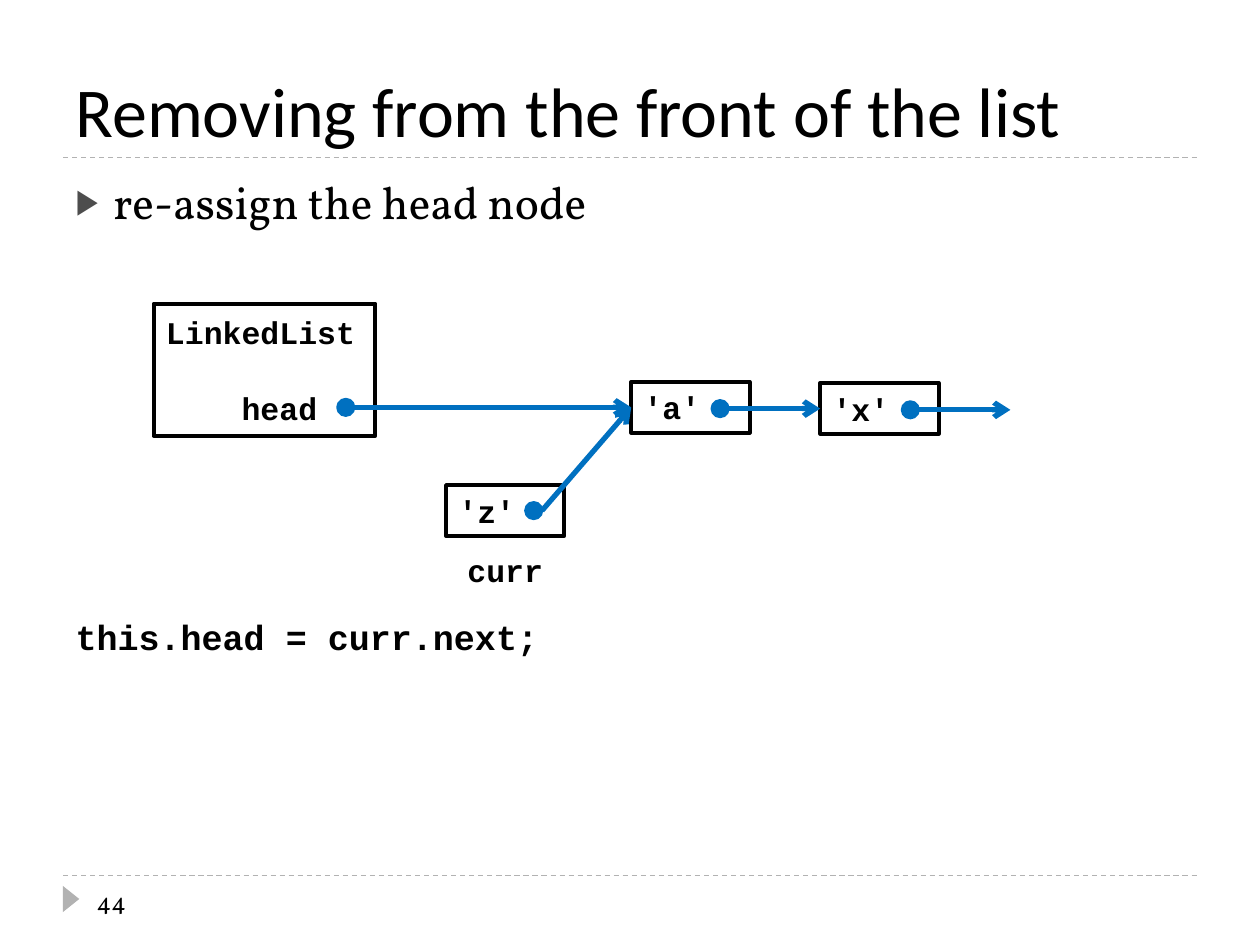
from lxml.etree import SubElement
from pptx import Presentation
from pptx.dml.color import RGBColor
from pptx.enum.dml import MSO_LINE
from pptx.enum.shapes import MSO_CONNECTOR, MSO_SHAPE
from pptx.enum.text import MSO_ANCHOR, PP_ALIGN
from pptx.oxml.ns import qn
from pptx.util import Pt

COLORS = {name: RGBColor.from_string(value) for name, value in {
    "text": "000000", "pointer": "0070C0", "rule": "B2B2B2", "bullet": "4D4D4D",
}.items()}


def write(paragraph, text, font_name, size, bold=False):
    paragraph.text = text
    paragraph.font.name = font_name
    paragraph.font.size = Pt(size)
    paragraph.font.bold = bold
    paragraph.font.color.rgb = COLORS["text"]


def add_line(start_x, start_y, end_x, end_y, color, width):
    line = slide.shapes.add_connector(
        MSO_CONNECTOR.STRAIGHT, Pt(start_x), Pt(start_y), Pt(end_x), Pt(end_y))
    line.line.color.rgb = COLORS[color]
    line.line.width = Pt(width)
    SubElement(line._element.spPr, qn("a:effectLst"))
    return line


presentation = Presentation()
presentation.slide_width, presentation.slide_height = Pt(720), Pt(540)
slide = presentation.slides.add_slide(presentation.slide_layouts[1])

for rule_y in (500.4, 90):
    rule = add_line(36, rule_y, 684, rule_y, "rule", 0.75)
    rule.line.dash_style = MSO_LINE.DASH

marker = slide.shapes.add_shape(
    MSO_SHAPE.ISOSCELES_TRIANGLE, Pt(33.1), Pt(509), Pt(15), Pt(9.4))
marker.rotation = 90
marker.shadow.inherit = False
marker.fill.solid()
marker.fill.fore_color.rgb = COLORS["rule"]
marker.line.fill.background()

title = slide.shapes.title
title.left, title.top, title.width, title.height = Pt(36), Pt(12.2), Pt(648), Pt(77.8)
title.text_frame.vertical_anchor = MSO_ANCHOR.BOTTOM
heading = title.text_frame.paragraphs[0]
write(heading, "Removing from the front of the list", "Calibri", 40)
heading.alignment = PP_ALIGN.LEFT

body = slide.placeholders[1]
body.left, body.top, body.width, body.height = Pt(36), Pt(95.8), Pt(648), Pt(388.8)
step = body.text_frame.paragraphs[0]
write(step, "re-assign the head node", "Vollkorn", 26)
step.space_before = Pt(6)
step_properties = step._p.get_or_add_pPr()
step_properties.set("marL", str(Pt(21.6)))
step_properties.set("indent", str(Pt(-21.6)))
bullet_color = SubElement(step_properties, qn("a:buClr"))
SubElement(bullet_color, qn("a:srgbClr"), val=str(COLORS["bullet"]))
SubElement(step_properties, qn("a:buSzPct"), val="76000")
SubElement(step_properties, qn("a:buChar"), char="▶")

code = body.text_frame.add_paragraph()
write(code, "this.head = curr.next;", "Courier New", 20, bold=True)
code.space_before = Pt(221)
code_properties = code._p.get_or_add_pPr()
code_properties.set("marL", "0")
code_properties.set("indent", "0")
SubElement(code_properties, qn("a:buNone"))

boxes = [
    ("LinkedList", 87.8, 173.5, 126.7, 75.6),
    ("'a'", 360.7, 218.2, 67.7, 29),
    ("'x'", 468.7, 218.9, 67.7, 29),
    ("'z'", 254.9, 277.2, 67.7, 29),
]
for text, left, top, width, height in boxes:
    box = slide.shapes.add_shape(
        MSO_SHAPE.RECTANGLE, Pt(left), Pt(top), Pt(width), Pt(height))
    box.shadow.inherit = False
    box.fill.background()
    box.line.color.rgb = COLORS["text"]
    box.line.width = Pt(2.25)
    box.text_frame.vertical_anchor = MSO_ANCHOR.MIDDLE
    label = box.text_frame.paragraphs[0]
    write(label, text, "Courier New", 18, bold=True)
    label.alignment = PP_ALIGN.LEFT
    if text == "LinkedList":
        field = box.text_frame.add_paragraph()
        write(field, "head", "Courier New", 18, bold=True)
        field.alignment = PP_ALIGN.LEFT
        field.space_before = Pt(22)
        field._p.get_or_add_pPr().set("marL", str(Pt(43.2)))

dot_size = 9.4
pointers = [
    (197.6, 232.8, 360.7, 232.8),
    (411.5, 233.5, 468.7, 233.5),
    (520.2, 234.2, 577.4, 234.2),
    (305, 291.8, 360.7, 232.8),
]
for center_x, center_y, end_x, end_y in pointers:
    dot = slide.shapes.add_shape(
        MSO_SHAPE.OVAL, Pt(center_x - dot_size / 2), Pt(center_y - dot_size / 2),
        Pt(dot_size), Pt(dot_size))
    dot.shadow.inherit = False
    dot.fill.solid()
    dot.fill.fore_color.rgb = COLORS["pointer"]
    dot.line.color.rgb = COLORS["pointer"]
    dot.line.width = Pt(1.5)
    arrow = add_line(center_x + dot_size / 2, center_y, end_x, end_y, "pointer", 3)
    SubElement(arrow.line._get_or_add_ln(), qn("a:tailEnd"), type="arrow")

captions = [
    ("curr", 254.9, 311, 67.7, "Courier New", 18, True, PP_ALIGN.CENTER),
    ("44", 48.2, 500.4, 156.2, "Vollkorn", 14, False, PP_ALIGN.LEFT),
]
for text, left, top, width, font_name, size, bold, alignment in captions:
    caption = slide.shapes.add_textbox(Pt(left), Pt(top), Pt(width), Pt(29))
    caption.text_frame.word_wrap = True
    caption.text_frame.vertical_anchor = MSO_ANCHOR.MIDDLE
    paragraph = caption.text_frame.paragraphs[0]
    write(paragraph, text, font_name, size, bold)
    paragraph.alignment = alignment

presentation.save("out.pptx")
